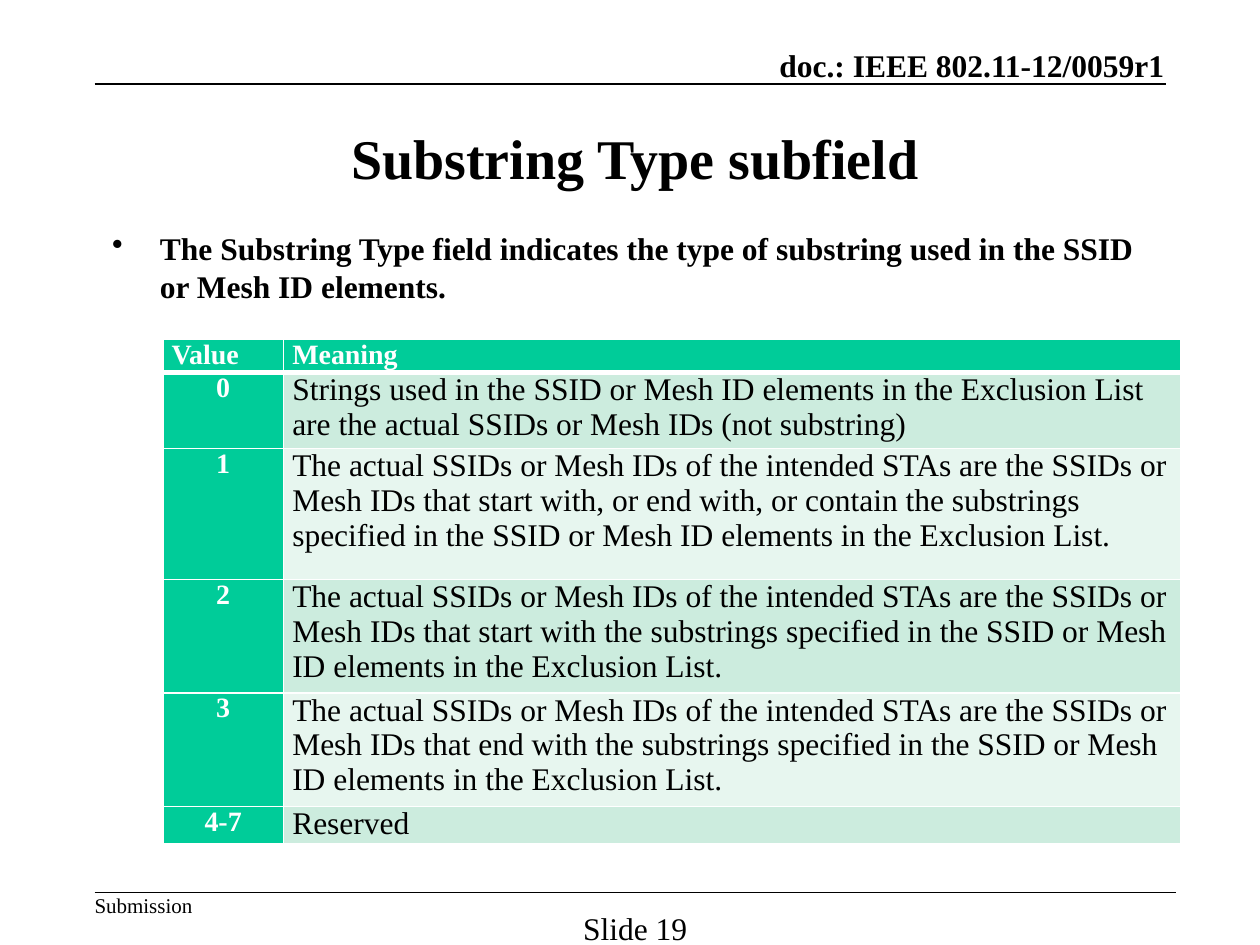
from dataclasses import dataclass

from lxml import etree
from pptx import Presentation
from pptx import util as u
from pptx.dml.color import RGBColor
from pptx.enum import shapes, text
from pptx.oxml.ns import qn

FONT = "Times New Roman"
BLACK, WHITE, GREEN = "000000", "FFFFFF", "00CC99"
BANDS = ("CCECDE", "E7F6EF")
LEFT, MID, RIGHT = text.PP_ALIGN.LEFT, text.PP_ALIGN.CENTER, text.PP_ALIGN.RIGHT
TOP, HALF, LOW = text.MSO_ANCHOR.TOP, text.MSO_ANCHOR.MIDDLE, text.MSO_ANCHOR.BOTTOM


@dataclass
class Label:
    """A text box; its place is in grid units."""
    words: str
    x: float
    y: float
    w: float
    h: float
    size: int
    bold: bool = False
    align: text.PP_ALIGN = LEFT
    anchor: text.MSO_ANCHOR = TOP
    wrap: bool = False
    pad: tuple = (0, 0)  # side and top inset, inches
    bullet: bool = False


@dataclass
class Row:
    value: str
    meaning: str
    high: float  # least height, inches; the text may stretch it


def grid(n: float) -> int:
    """The slide is 240 columns by 180 rows of 1/24 inch."""
    return u.Inches(n / 24)


def tint(code: str) -> RGBColor:
    return RGBColor.from_string(code)


def write(para, words: str, size: int, bold: bool, color: str, align) -> None:
    para.alignment = align
    run = para.add_run()
    run.text = words
    font = run.font
    font.name, font.size, font.bold = FONT, u.Pt(size), bold
    font.color.rgb = tint(color)


def dot(para) -> None:
    """Give a paragraph a hanging bullet."""
    props = para._p.get_or_add_pPr()
    props.set("marL", str(u.Inches(0.38)))
    props.set("indent", str(-u.Inches(0.38)))
    etree.SubElement(props, qn("a:buChar")).set("char", "•")


def put(slide, item: Label) -> None:
    box = slide.shapes.add_textbox(*map(grid, (item.x, item.y, item.w, item.h)))
    frame = box.text_frame
    frame.word_wrap = item.wrap
    frame.vertical_anchor = item.anchor
    side, top = item.pad
    frame.margin_left = frame.margin_right = u.Inches(side)
    frame.margin_top, frame.margin_bottom = u.Inches(top), u.Inches(min(top, 0.05))
    para = frame.paragraphs[0]
    if item.bullet:
        dot(para)
    write(para, item.words, item.size, item.bold, BLACK, item.align)


def rule(slide, x: float, y: float, end: float) -> None:
    line = slide.shapes.add_connector(
        shapes.MSO_CONNECTOR.STRAIGHT, grid(x), grid(y), grid(end), grid(y))
    line.line.color.rgb = tint(BLACK)
    line.line.width = u.Pt(1)
    etree.SubElement(line._element.spPr, qn("a:effectLst"))


def edge(cell, side: str, wide: float) -> None:
    line = etree.SubElement(cell._tc.get_or_add_tcPr(), qn(f"a:ln{side}"))
    line.set("w", str(u.Pt(wide)))
    fill = etree.SubElement(line, qn("a:solidFill"))
    etree.SubElement(fill, qn("a:srgbClr")).set("val", WHITE)


def fill_cell(cell, words: str, size: int, bold: bool, ink: str,
              back: str, align, top: float, low: float) -> None:
    cell.margin_left = cell.margin_right = u.Inches(0.07)
    cell.margin_top = cell.margin_bottom = 0
    # Borders come before the fill in the cell's XML
    for side, wide in zip("LRTB", (1, 1, top, low)):
        edge(cell, side, wide)
    cell.fill.solid()
    cell.fill.fore_color.rgb = tint(back)
    write(cell.text_frame.paragraphs[0], words, size, bold, ink, align)


def chart_rows(slide, rows: list[Row]) -> None:
    """Draw the table of values and meanings."""
    total = sum(row.high for row in rows)
    table = slide.shapes.add_table(
        len(rows), 2, grid(31), grid(64.6), grid(194), u.Inches(total)).table
    for col, wide in zip(table.columns, (23, 171)):
        col.width = grid(wide)
    for i, row in enumerate(rows):
        table.rows[i].height = u.Inches(row.high)
        head = i == 0
        rims = (3 if i == 1 else 1, 3 if head else 1)
        fill_cell(table.cell(i, 0), row.value, 16, True, WHITE, GREEN,
                  LEFT if head else MID, *rims)
        look = (16, True, WHITE, GREEN) if head else (18, False, BLACK, BANDS[(i - 1) % 2])
        fill_cell(table.cell(i, 1), row.meaning, *look, LEFT, *rims)


ACTUAL = "The actual SSIDs or Mesh IDs of the intended STAs are the SSIDs or Mesh IDs that "
GIVEN = " the substrings specified in the SSID or Mesh ID elements in the Exclusion List."

ROWS = [
    Row("Value", "Meaning", 0),
    Row("0", "Strings used in the SSID or Mesh ID elements in the Exclusion List "
             "are the actual SSIDs or Mesh IDs (not substring)", 0.52),
    Row("1", ACTUAL + "start with, or end with, or contain" + GIVEN, 1.04),
    Row("2", ACTUAL + "start with" + GIVEN, 0.78),
    Row("3", ACTUAL + "end with" + GIVEN, 0.78),
    Row("4-7", "Reserved", 0.29),
]

LABELS = [
    # Header and footer
    Label("doc.: IEEE 802.11-12/0059r1", 135.8, 8.6, 86, 7.3, 18, True, RIGHT, LOW),
    Label("Submission", 18, 170, 18.7, 4.8, 12),
    Label("Slide 19", 109, 173.2, 24, 4.8, 18, align=MID),
    # Body and title
    Label("The Substring Type field indicates the type of substring used in the SSID "
          "or Mesh ID elements.", 19, 34, 204, 134, 18, True, wrap=True,
          pad=(0.1, 0.4), bullet=True),
    Label("Substring Type subfield", 19, 16, 204, 28, 32, True, MID, HALF,
          True, (0.1, 0.05)),
]


def main() -> None:
    deck = Presentation()
    deck.slide_width, deck.slide_height = grid(240), grid(180)
    slide = deck.slides.add_slide(deck.slide_layouts[6])
    rule(slide, 18, 16, 222)
    rule(slide, 18, 170, 224)
    for item in LABELS:
        put(slide, item)
    chart_rows(slide, ROWS)
    deck.save("out.pptx")


if __name__ == "__main__":
    main()
